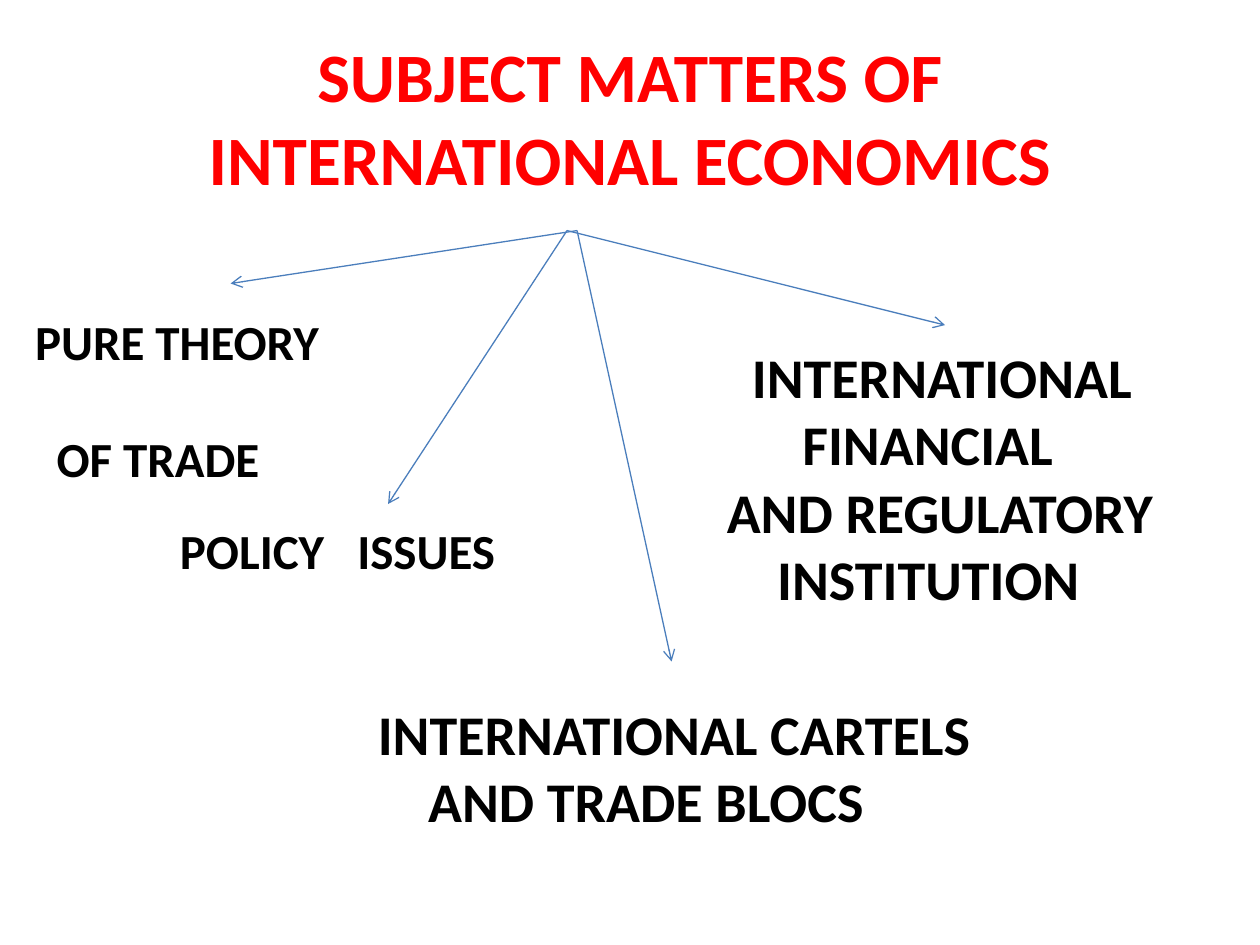
from lxml import etree
from pptx import Presentation
from pptx.dml.color import RGBColor
from pptx.enum import shapes, text
from pptx.oxml.ns import qn
from pptx.util import Inches, Pt

RED, BLACK, BLUE = "FF0000", "000000", "4B7EBC"


def color(value):
    return RGBColor.from_string(value)


def add_text(page, place, lines, size, fill=BLACK, gap=0):
    """Add bold text; each line is (indent in inches, wording)."""
    box = page.shapes.add_textbox(*(Inches(n) for n in place))
    frame = box.text_frame
    frame.word_wrap = True
    for number, (indent, wording) in enumerate(lines):
        para = frame.add_paragraph() if number else frame.paragraphs[0]
        para._p.get_or_add_pPr().set("marL", str(Inches(indent)))
        para.space_before = Pt(gap if number else 0)
        span = para.add_run()
        span.text = wording
        span.font.name = "Calibri"
        span.font.size = Pt(size)
        span.font.bold = True
        span.font.color.rgb = color(fill)
    return frame


def add_title(page, wording):
    frame = add_text(page, (0.5, 0.3, 9, 1.25), [(0, wording)], 39.6, RED)
    frame.margin_left = frame.margin_right = Inches(0.3)
    frame.vertical_anchor = text.MSO_ANCHOR.MIDDLE
    frame.paragraphs[0].alignment = text.PP_ALIGN.CENTER


def add_arrow(page, start, end):
    arrow = page.shapes.add_connector(
        shapes.MSO_CONNECTOR.STRAIGHT, *(Inches(n) for n in start + end))
    arrow.line.color.rgb = color(BLUE)
    arrow.line.width = Pt(0.75)
    etree.SubElement(arrow.line._get_or_add_ln(), qn("a:tailEnd"), type="arrow")
    etree.SubElement(arrow._element.spPr, qn("a:effectLst"))


def main():
    deck = Presentation()
    deck.slide_width, deck.slide_height = Inches(10), Inches(7.5)
    page = deck.slides.add_slide(deck.slide_layouts[6])

    add_title(page, "SUBJECT MATTERS OF INTERNATIONAL ECONOMICS")

    # Arrows from below the title to each subject
    left_origin, right_origin = (4.5, 1.83), (4.58, 1.83)
    for start, end in [
        (right_origin, (1.83, 2.25)),
        (left_origin, (3.08, 4)),
        (left_origin, (7.5, 2.58)),
        (right_origin, (5.33, 5.25)),
    ]:
        add_arrow(page, start, end)

    # Subjects
    add_text(page, (0, 2.42, 2.75, 1.04),
             [(0.18, "PURE THEORY"), (0.35, "OF TRADE")], 28, gap=33.5)
    add_text(page, (1.33, 4.08, 2.92, 0.57), [(0, "POLICY   ISSUES")], 28)
    add_text(page, (2.5, 5.5, 5.58, 1.18),
             [(0.4, "INTERNATIONAL CARTELS"), (0.8, "AND TRADE BLOCS")], 32)
    add_text(page, (5.17, 2.67, 4.67, 2.26),
             [(0.7, "INTERNATIONAL"), (1.1, "FINANCIAL"),
              (0.5, "AND REGULATORY"), (0.9, "INSTITUTION")], 32)

    deck.save("out.pptx")


if __name__ == "__main__":
    main()
